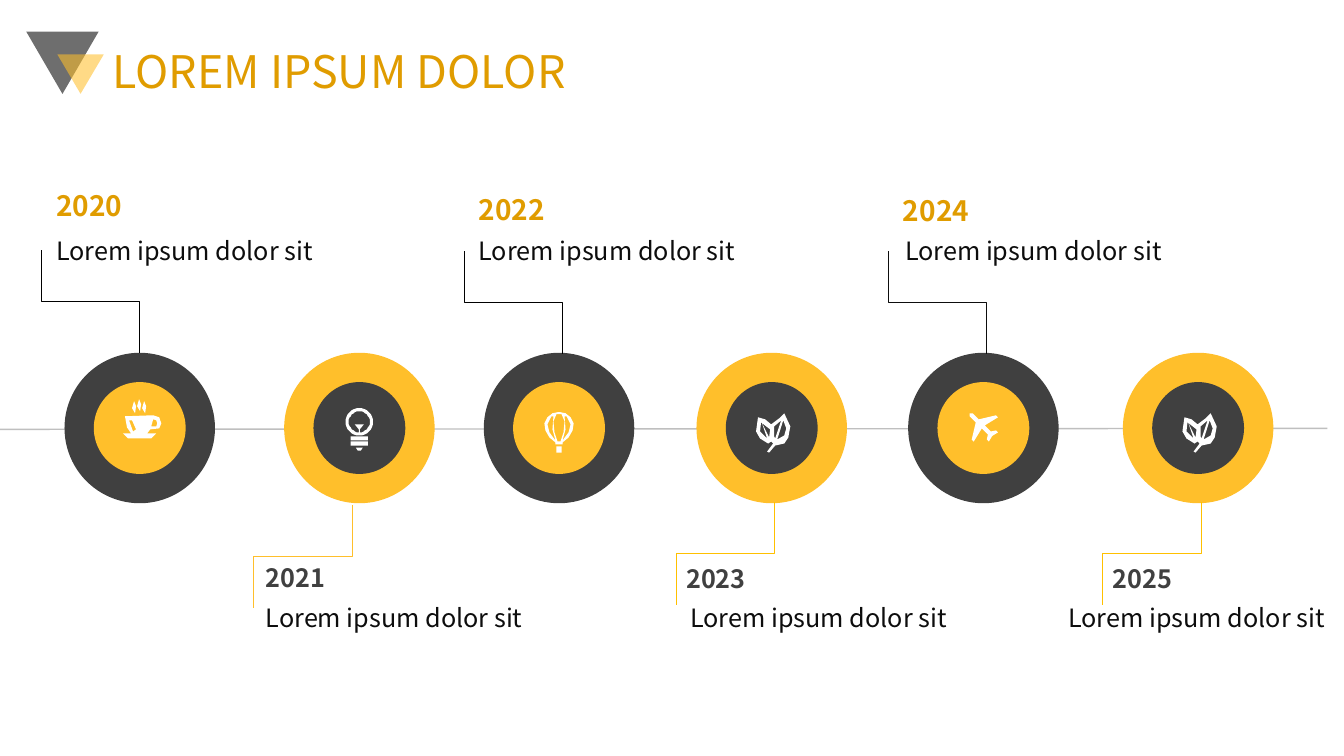
import collections
import math

import pptx
import pptx.dml.color
import pptx.enum.shapes
import pptx.enum.text
import pptx.oxml
import pptx.oxml.ns
import pptx.util

Pt = pptx.util.Pt
Shapes = pptx.enum.shapes.MSO_SHAPE
Connectors = pptx.enum.shapes.MSO_CONNECTOR
Anchors = pptx.enum.text.MSO_ANCHOR

COLORS = {
    "amber": "FFBF2B", "gold": "FFC000", "ochre": "E09C00", "charcoal": "404040",
    "ink": "0D0D0D", "black": "000000", "axis": "BFBFBF", "white": "FFFFFF",
}
FONT = "Noto Sans CJK JP"
TITLE_FORMAT = {"size": Pt(32), "name": FONT}
UPPER_YEAR_FORMAT = {"size": Pt(20), "name": FONT, "bold": True}
LOWER_YEAR_FORMAT = {"size": Pt(18), "name": FONT, "bold": True}
TEXT_FORMAT = {"size": Pt(18), "name": FONT}

RING_TOP, RING_SIZE, HUB_SIZE = 252, 107.5, 65.6
LEADER_WIDTH, LEADER_HEIGHT = 70.2, 73.4
ICON_UNIT = 0.72

Milestone = collections.namedtuple(
    "Milestone", "year ring_left leader leader_color year_place text_left icon")
MILESTONES = [
    Milestone("2020", 46.1, (29.5, 178.8), "black", (33.1, 133.9), 33.1, "cup"),
    Milestone("2022", 345.6, (331.4, 179.5), "black", (334.8, 136.8), 334.8, "balloon"),
    Milestone("2024", 648.7, (634.5, 179.5), "ink", (637.9, 137.5), 639.4, "plane"),
    Milestone("2023", 497.5, (483.1, 358.4), "gold", (483.1, 401), 486, "leaf"),
    Milestone("2021", 203, (181.2, 360.8), "amber", (182.9, 400.3), 182.9, "bulb"),
    Milestone("2025", 802.1, (787.7, 358.4), "gold", (787.7, 401), 756, "leaf"),
]
ICON_OFFSETS = {"cup": (-12, 33.1), "balloon": (-10.5, 42.5), "plane": (-10.5, 42.5),
                "leaf": (-11.2, 43.2), "bulb": (-9.8, 39.6)}


def mirror(points, width):
    return [(width - x, y) for x, y in reversed(points)]


def symmetric(half, width):
    return half + mirror(half, width)


def circle(center, radius, steps=32):
    angles = [2 * math.pi * step / steps for step in range(steps)]
    return [(center + radius * math.cos(angle), center + radius * math.sin(angle))
            for angle in angles]


def cup():
    body = [(2, 17), (30, 16), (36, 18), (38, 24), (36, 29), (27, 30), (24, 34), (33, 34),
            (28, 39), (5, 39), (0, 34), (8, 34), (4, 28)]
    handle = [(30, 20), (33, 21), (34, 24), (33, 27), (28, 27)]
    shine = [(6, 21), (9, 21), (13, 30), (10, 32)]
    steam = [[(x + 5 * index, y - 2 * (index % 2))
              for x, y in ((12, 14), (9, 9), (11, 2), (13, 7))] for index in range(3)]
    return [body, handle, shine] + steam


def bulb():
    bands = [symmetric([(5, top), (5, top + 4)], 27) for top in (28, 33)]
    foot = symmetric([(10, 39), (12, 42)], 27)
    filament = symmetric([(9, 16), (13, 21), (13, 24)], 27)
    return [circle(13.5, 13.5), circle(13.5, 10.5), filament, foot] + bands


def balloon():
    envelope = [(13, 0), (8, 1), (3, 5), (0, 11), (1, 18), (5, 25), (11, 30), (11, 32)]
    middle = [(12, 2), (9, 9), (10, 20), (13, 29)]
    gap = [(7, 4), (3, 12), (5, 20), (11, 28), (8, 17), (9, 4)]
    basket = [(12, 34), (12, 40)]
    return [symmetric(half, 29) for half in (envelope, middle, basket)] + [gap, mirror(gap, 29)]


def leaf():
    outline = [(17, 30), (15, 28), (12, 30), (4, 25), (0, 18), (2, 4), (9, 6), (15, 11),
               (23, 5), (28, 0), (34, 13), (32, 24), (28, 30), (19, 32), (13, 39), (11, 38)]
    left_gap = [(11, 25), (6, 10), (13, 24), (14, 16), (5, 9), (4, 18)]
    middle_gap = [(18, 23), (19, 25), (25, 7), (18, 13)]
    right_gap = [(21, 26), (28, 22), (30, 15), (27, 7)]
    return [outline, left_gap, middle_gap, right_gap]


def plane():
    half = [(1, 1), (4, 1), (10, 7), (27, 3), (29, 5), (16, 13), (22, 19), (27, 18),
            (29, 20), (24, 23)]
    return [half + [(y, x) for x, y in reversed(half)]]


ICONS = {"cup": cup, "bulb": bulb, "balloon": balloon, "leaf": leaf, "plane": plane}


def rgb(color):
    return pptx.dml.color.RGBColor.from_string(COLORS[color])


def paint(shape, color):
    shape.shadow.inherit = False
    shape.fill.solid()
    shape.fill.fore_color.rgb = rgb(color)
    shape.line.fill.background()


def add_filled(slide, kind, left, top, width, height, color):
    shape = slide.shapes.add_shape(kind, Pt(left), Pt(top), Pt(width), Pt(height))
    paint(shape, color)
    return shape


def add_triangle(slide, left, top, width, height, color):
    shape = add_filled(slide, Shapes.ISOSCELES_TRIANGLE, left, top, width, height, color)
    shape.rotation = 180
    fill_color = shape.element.spPr.find(".//" + pptx.oxml.ns.qn("a:srgbClr"))
    fill_color.append(pptx.oxml.parse_xml(
        f'<a:alpha {pptx.oxml.ns.nsdecls("a")} val="57000"/>'))


def add_line(slide, kind, start, end, color, width):
    line = slide.shapes.add_connector(kind, *(Pt(value) for value in start + end))
    line.line.color.rgb = rgb(color)
    line.line.width = Pt(width)
    line.element.spPr.append(pptx.oxml.parse_xml(
        f'<a:effectLst {pptx.oxml.ns.nsdecls("a")}/>'))
    return line


def add_leader(slide, place, color, above):
    middle_x, middle_y = place[0] + LEADER_WIDTH / 2, place[1] + LEADER_HEIGHT / 2
    reach = LEADER_HEIGHT / 2 * (1 if above else -1)
    start = (middle_x + reach, middle_y - LEADER_WIDTH / 2)
    end = (middle_x - reach, middle_y + LEADER_WIDTH / 2)
    leader = add_line(slide, Connectors.ELBOW, start, end, color, 0.5)
    turn = 270 if above else 90
    leader.element.spPr.find(pptx.oxml.ns.qn("a:xfrm")).set("rot", str(turn * 60000))


def add_text(slide, text, left, top, width, height, format_values, color,
             line_spacing=None, anchor=Anchors.TOP):
    box = slide.shapes.add_textbox(Pt(left), Pt(top), Pt(width), Pt(height))
    box.text_frame.word_wrap = True
    box.text_frame.vertical_anchor = anchor
    paragraph = box.text_frame.paragraphs[0]
    paragraph.line_spacing = line_spacing
    run = paragraph.add_run()
    run.text = text
    for name, value in format_values.items():
        setattr(run.font, name, value)
    run.font.color.rgb = rgb(color)


def add_icon(slide, icon, ring_left):
    contours = ICONS[icon]()
    builder = slide.shapes.build_freeform(*contours[0][0], scale=Pt(ICON_UNIT))
    for index, points in enumerate(contours):
        if index:
            builder.move_to(*points[0])
        builder.add_line_segments(points[1:], close=True)
    shift, drop = ICON_OFFSETS[icon]
    left = ring_left + RING_SIZE / 2 + shift
    paint(builder.convert_to_shape(Pt(left), Pt(RING_TOP + drop)), "white")


def add_milestone(slide, milestone):
    above = milestone.leader[1] < RING_TOP
    ring_color, hub_color = ("charcoal", "amber") if above else ("amber", "charcoal")
    inset = (RING_SIZE - HUB_SIZE) / 2
    for offset, size, color in ((0, RING_SIZE, ring_color), (inset, HUB_SIZE, hub_color)):
        add_filled(slide, Shapes.FLOWCHART_CONNECTOR, milestone.ring_left + offset,
                   RING_TOP + offset, size, size, color)
    add_leader(slide, milestone.leader, milestone.leader_color, above)
    year_format, year_color, year_height, text_top = (
        (UPPER_YEAR_FORMAT, "ochre", 31.7, 164.2) if above
        else (LOWER_YEAR_FORMAT, "charcoal", 28.8, 427))
    add_text(slide, milestone.year, *milestone.year_place, 109.4, year_height,
             year_format, year_color, 0.9)
    add_icon(slide, milestone.icon, milestone.ring_left)
    add_text(slide, "Lorem ipsum dolor sit", milestone.text_left, text_top, 201.2, 51.1,
             TEXT_FORMAT, "ink")


def main():
    presentation = pptx.Presentation()
    presentation.slide_width, presentation.slide_height = Pt(960), Pt(540)
    slide = presentation.slides.add_slide(presentation.slide_layouts[6])
    add_triangle(slide, 18.7, 22.5, 51.8, 44.6, "black")
    add_triangle(slide, 41, 38.9, 33.1, 28.1, "amber")
    add_line(slide, Connectors.STRAIGHT, (-11.5, 306.7), (948.2, 306), "axis", 1)
    for milestone in MILESTONES:
        add_milestone(slide, milestone)
    add_text(slide, "LOREM IPSUM DOLOR", 73.4, 22.3, 828, 61.2, TITLE_FORMAT, "ochre",
             0.9, Anchors.MIDDLE)
    presentation.save("out.pptx")


if __name__ == "__main__":
    main()
